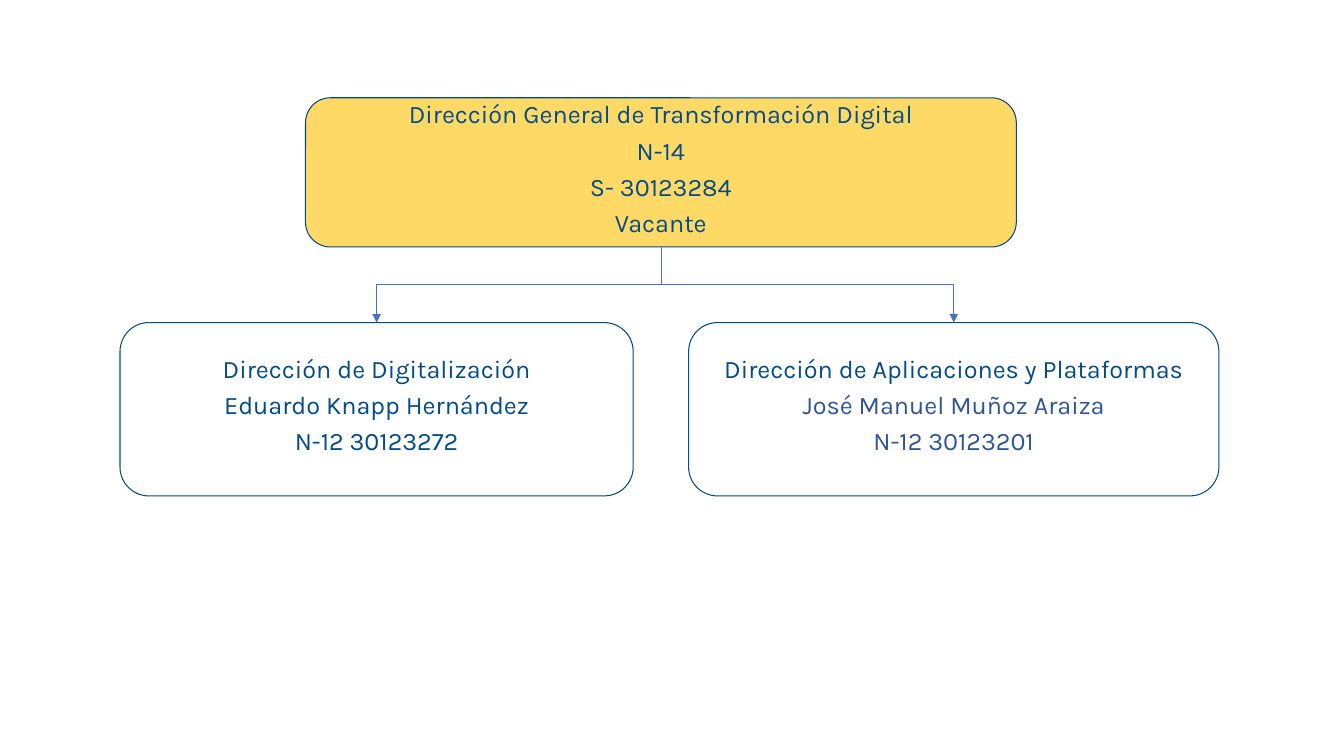
from lxml import etree
from pptx import Presentation
from pptx.dml.color import RGBColor
from pptx.enum.shapes import MSO_CONNECTOR, MSO_SHAPE
from pptx.enum.text import MSO_ANCHOR, PP_ALIGN
from pptx.oxml.ns import qn
from pptx.util import Inches, Pt

ROUNDED = MSO_SHAPE.ROUNDED_RECTANGLE
ELBOW = MSO_CONNECTOR.ELBOW
MIDDLE = MSO_ANCHOR.MIDDLE
CENTER = PP_ALIGN.CENTER
TOP_SITE, BOTTOM_SITE = 0, 2

FONT = "Karla"
COLORS = {
    "head": "FFD966",
    "unit": "FFFFFF",
    "border": "004A86",
    "text": "034C88",
    "accent": "2F5597",
    "arrow": "4472C4",
}

# Boxes as left, top, width, height in inches
UNIT_TOP, UNIT_HEIGHT = 3.2, 1.72
HEAD = ((3.03, 0.97, 7.05, 1.48), [
    ("Dirección General de Transformación Digital", "text"),
    ("N-14", "text"),
    ("S- 30123284", "text"),
    ("Vacante", "text"),
])
UNITS = [
    ((1.19, UNIT_TOP, 5.09, UNIT_HEIGHT), [
        ("Dirección de Digitalización", "text"),
        ("Eduardo Knapp Hernández", "text"),
        ("N-12 30123272", "text"),
    ]),
    ((6.83, UNIT_TOP, 5.26, UNIT_HEIGHT), [
        ("Dirección de Aplicaciones y Plataformas", "text"),
        ("José Manuel Muñoz Araiza", "accent"),
        ("N-12 30123201", "accent"),
    ]),
]


def rgb(name):
    return RGBColor.from_string(COLORS[name])


def add_line(tf, index, text, color):
    p = tf.add_paragraph() if index else tf.paragraphs[0]
    p.alignment = CENTER
    p.line_spacing = 0.9
    p.space_after = Pt(0)
    # Spacing after as a share of the text size
    after = p._p.pPr.find(qn("a:spcAft"))
    after.clear()
    etree.SubElement(after, qn("a:spcPct")).set("val", "35000")
    r = p.add_run()
    r.text = text
    r.font.name = FONT
    r.font.size = Pt(18)
    r.font.color.rgb = rgb(color)


def add_box(slide, box, lines, fill):
    sp = slide.shapes.add_shape(ROUNDED, *(Inches(n) for n in box))
    sp.shadow.inherit = False
    sp.fill.solid()
    sp.fill.fore_color.rgb = rgb(fill)
    sp.line.color.rgb = rgb("border")
    sp.line.width = Pt(0.75)
    tf = sp.text_frame
    tf.word_wrap = True
    tf.vertical_anchor = MIDDLE
    tf.margin_left = tf.margin_right = tf.margin_top = Inches(0.01)
    tf.margin_bottom = Inches(0.06)
    for index, (text, color) in enumerate(lines):
        add_line(tf, index, text, color)
    return sp


def add_arrow(slide, parent, child):
    x1, y1 = parent.left + parent.width // 2, parent.top + parent.height
    x2, y2 = child.left + child.width // 2, child.top
    cxn = slide.shapes.add_connector(ELBOW, x1, y1, x2, y2)
    cxn.begin_connect(parent, BOTTOM_SITE)
    cxn.end_connect(child, TOP_SITE)

    # Turn the elbow about its centre so that it leaves downwards
    drop, reach = y2 - y1, abs(x2 - x1)
    cxn.left, cxn.top = (x1 + x2 - drop) // 2, (y1 + y2 - reach) // 2
    cxn.width, cxn.height = drop, reach
    to_right = x2 > x1
    xfrm = cxn._element.spPr.find(qn("a:xfrm"))
    xfrm.set("rot", str((270 if to_right else 90) * 60000))
    xfrm.set("flipH", "1" if to_right else "0")

    # Thin line with an arrowhead and no shadow
    cxn.line.color.rgb = rgb("arrow")
    cxn.line.width = Pt(0.5)
    ln = cxn.line._get_or_add_ln()
    etree.SubElement(ln, qn("a:tailEnd")).set("type", "triangle")
    etree.SubElement(cxn._element.spPr, qn("a:effectLst"))


def add_org_chart(slide):
    head = add_box(slide, *HEAD, "head")
    units = [add_box(slide, *unit, "unit") for unit in UNITS]
    for unit in units:
        add_arrow(slide, head, unit)


def main():
    prs = Presentation()
    prs.slide_width, prs.slide_height = Inches(13.33), Inches(7.5)
    slide = prs.slides.add_slide(prs.slide_layouts[6])
    add_org_chart(slide)
    prs.save("out.pptx")


if __name__ == "__main__":
    main()
